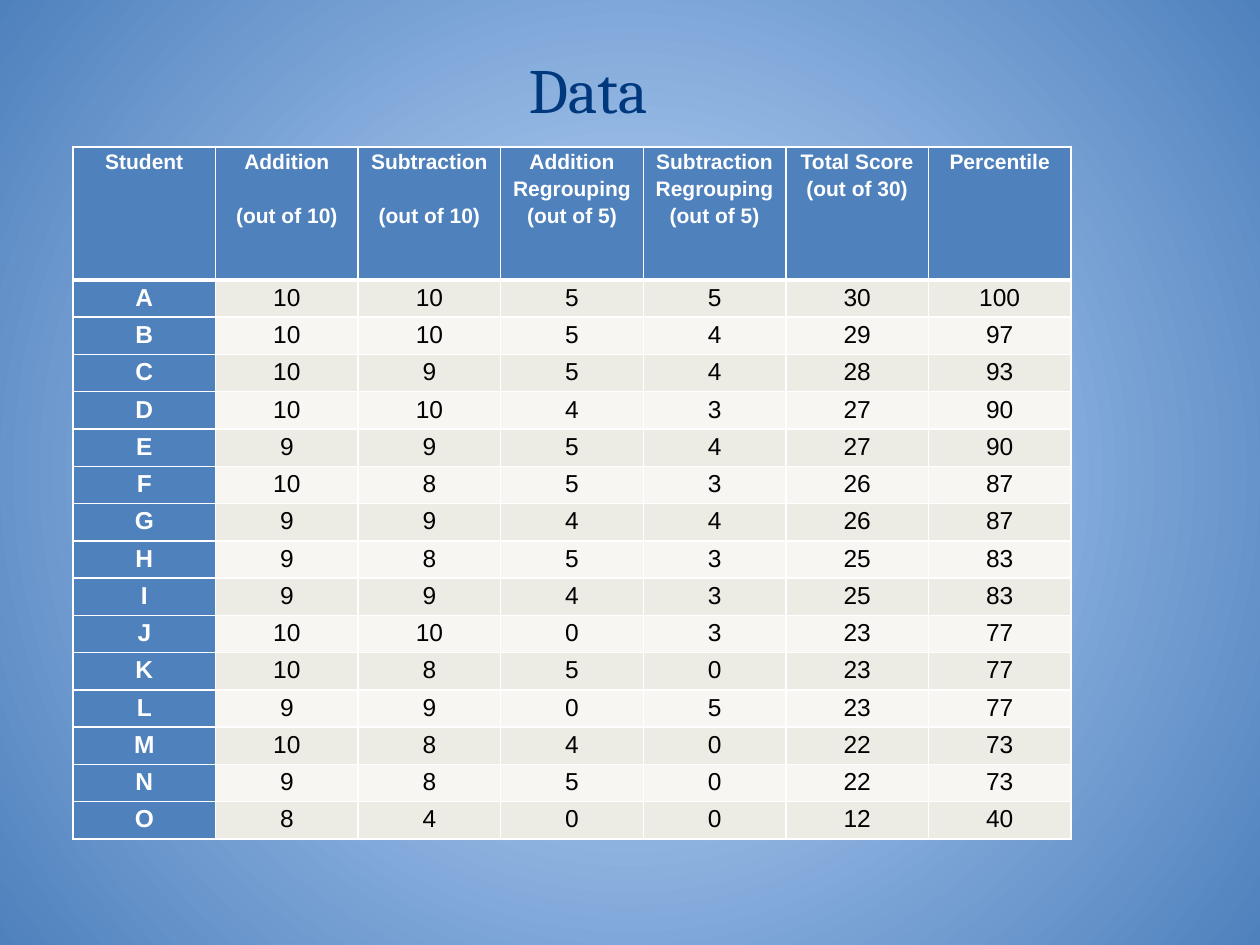
import pptx
import pptx.dml.color
import pptx.enum.text
import pptx.oxml
import pptx.oxml.ns
import pptx.util

SCALE = 914400 / 126
WHITE, BLACK, BLUE, NAVY = "FFFFFF", "000000", "4F81BD", "00387E"
BANDS = ["EDECE4", "F7F6F3"]
HEADINGS = [
    ["Student"],
    ["Addition", "(out of 10)"],
    ["Subtraction", "(out of 10)"],
    ["Addition", "Regrouping", "(out of 5)"],
    ["Subtraction", "Regrouping", "(out of 5)"],
    ["Total Score", "(out of 30)"],
    ["Percentile"],
]
GAP_COLUMNS = (1, 2)
SCORES = [
    ("A", 10, 10, 5, 5, 30, 100),
    ("B", 10, 10, 5, 4, 29, 97),
    ("C", 10, 9, 5, 4, 28, 93),
    ("D", 10, 10, 4, 3, 27, 90),
    ("E", 9, 9, 5, 4, 27, 90),
    ("F", 10, 8, 5, 3, 26, 87),
    ("G", 9, 9, 4, 4, 26, 87),
    ("H", 9, 8, 5, 3, 25, 83),
    ("I", 9, 9, 4, 3, 25, 83),
    ("J", 10, 10, 0, 3, 23, 77),
    ("K", 10, 8, 5, 0, 23, 77),
    ("L", 9, 9, 0, 5, 23, 77),
    ("M", 10, 8, 4, 0, 22, 73),
    ("N", 9, 8, 5, 0, 22, 73),
    ("O", 8, 4, 0, 0, 12, 40),
]


def px(length):
    return pptx.util.Emu(round(length * SCALE))


def color(value):
    return pptx.dml.color.RGBColor.from_string(value)


def element(xml):
    namespace = pptx.oxml.ns.nsdecls("a")
    return pptx.oxml.parse_xml(xml.replace(">", f" {namespace}>", 1))


class SlideBuilder:
    def __init__(self, slide, title_font, table_font):
        self.slide = slide
        self.title_font = title_font
        self.table_font = table_font

    def background(self, center, edge):
        fill = self.slide.background.fill
        fill.gradient()
        for stop, value, position in zip(fill.gradient_stops, (center, edge), (0, 1)):
            stop.color.rgb = color(value)
            stop.position = position
        linear = self.slide.element.xpath("./p:cSld/p:bg//a:lin")[0]
        linear.getparent().replace(linear, element(
            '<a:path path="circle"><a:fillToRect l="50000" t="50000" r="50000" b="50000"/></a:path>'))

    def text(self, para, words, font, size, value, bold=False):
        para.alignment = pptx.enum.text.PP_ALIGN.CENTER
        span = para.add_run()
        span.text = words
        span.font.name = font
        span.font.size = pptx.util.Pt(size)
        span.font.bold = bold
        span.font.color.rgb = color(value)

    def title(self, words, left, top, width, height):
        box = self.slide.shapes.add_textbox(px(left), px(top), px(width), px(height))
        frame = box.text_frame
        frame.word_wrap = True
        frame.vertical_anchor = pptx.enum.text.MSO_ANCHOR.MIDDLE
        self.text(frame.paragraphs[0], words, self.title_font, 36, NAVY)

    def cell(self, cell, lines, size, value, bold, fill, top=1, bottom=1, gap=0):
        cell.margin_left = cell.margin_right = px(9)
        cell.margin_top = cell.margin_bottom = 0
        cell.fill.solid()
        cell.fill.fore_color.rgb = color(fill)
        properties = cell._tc.get_or_add_tcPr()
        for index, (side, points) in enumerate((("L", 1), ("R", 1), ("T", top), ("B", bottom))):
            properties.insert(index, element(
                f'<a:ln{side} w="{pptx.util.Pt(points)}"><a:solidFill>'
                f'<a:srgbClr val="{WHITE}"/></a:solidFill></a:ln{side}>'))
        frame = cell.text_frame
        for index, line in enumerate(lines):
            para = frame.add_paragraph() if index else frame.paragraphs[0]
            para.line_spacing = 1.15
            if index and gap:
                para.space_before = pptx.util.Pt(gap)
            self.text(para, line, self.table_font, size, value, bold)

    def table(self, headings, rows, left, top, width, header_height, body_height):
        frame = self.slide.shapes.add_table(
            len(rows) + 1, len(headings),
            px(left), px(top), px(width), px(header_height + body_height))
        table = frame.table
        table.first_row = table.horz_banding = False
        for column in table.columns:
            column.width = px(width / len(headings))
        for row in table.rows:
            row.height = px(body_height / len(rows))
        table.rows[0].height = px(header_height)
        for column, lines in enumerate(headings):
            gap = 15.4 if column in GAP_COLUMNS else 0
            self.cell(table.cell(0, column), lines, 12, WHITE, True, BLUE, bottom=3, gap=gap)
        for number, values in enumerate(rows):
            for column, entry in enumerate(values):
                is_name = column == 0
                self.cell(
                    table.cell(number + 1, column), [str(entry)], 14,
                    WHITE if is_name else BLACK, is_name,
                    BLUE if is_name else BANDS[number % 2],
                    top=1 if number else 3)


def main():
    deck = pptx.Presentation()
    deck.slide_width, deck.slide_height = px(1260), px(945)
    page = SlideBuilder(deck.slides.add_slide(deck.slide_layouts[6]), "Cambria", "Arial")
    page.background("C6DFFF", BLUE)
    page.title("Data", 63, 38, 1050, 100)
    page.table(HEADINGS, SCORES, 73, 147, 998, 133, 559)
    deck.save("out.pptx")


if __name__ == "__main__":
    main()
